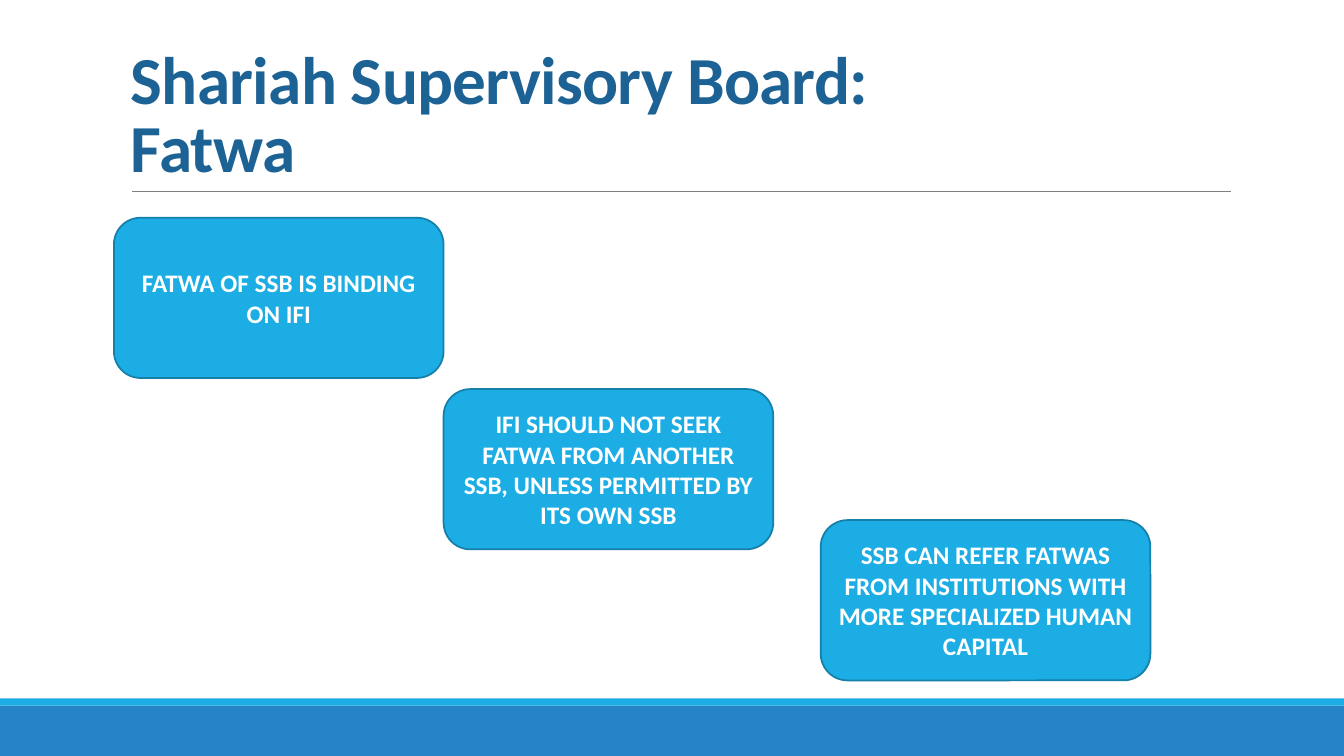
from dataclasses import dataclass

from lxml.etree import SubElement
from pptx import Presentation
from pptx.dml.color import RGBColor
from pptx.enum.shapes import MSO_CONNECTOR, MSO_SHAPE
from pptx.enum.text import MSO_ANCHOR, PP_ALIGN
from pptx.oxml.ns import qn
from pptx.shapes.autoshape import Shape
from pptx.slide import Slide
from pptx.util import Inches, Pt


@dataclass(frozen=True)
class Theme:
    font: str = "Calibri"
    title_size: float = 48
    card_size: float = 18
    title: RGBColor = RGBColor.from_string("1D6294")
    card_text: RGBColor = RGBColor.from_string("FFFFFF")
    accent: RGBColor = RGBColor.from_string("1CADE4")
    card_line: RGBColor = RGBColor.from_string("1580A9")
    footer: RGBColor = RGBColor.from_string("2683C6")
    rule: RGBColor = RGBColor.from_string("808080")


@dataclass(frozen=True)
class Band:
    top: float
    height: float
    color: RGBColor


@dataclass(frozen=True)
class Card:
    left: float
    top: float
    text: str


THEME = Theme()
SLIDE_WIDTH, SLIDE_HEIGHT = 13.33, 7.5
CARD_WIDTH, CARD_HEIGHT = 3.27, 1.59
TITLE = "Shariah Supervisory Board:\vFatwa"
BANDS = (
    Band(7, 0.5, THEME.footer),
    Band(6.93, 0.07, THEME.accent),
)
CARDS = (
    Card(1.13, 2.16, "FATWA OF SSB IS BINDING ON IFI"),
    Card(4.4, 3.86, "IFI SHOULD NOT SEEK FATWA FROM ANOTHER SSB, "
                    "UNLESS PERMITTED BY ITS OWN SSB"),
    Card(8.14, 5.16, "SSB CAN REFER FATWAS FROM INSTITUTIONS WITH "
                     "MORE SPECIALIZED HUMAN CAPITAL"),
)


def write_text(shape: Shape, text: str, size: float, color: RGBColor,
               anchor: MSO_ANCHOR, alignment: PP_ALIGN) -> None:
    frame = shape.text_frame
    frame.word_wrap = True
    frame.vertical_anchor = anchor
    paragraph = frame.paragraphs[0]
    paragraph.text = text
    paragraph.alignment = alignment
    formats = {"name": THEME.font, "size": Pt(size), "bold": True}
    for run in paragraph.runs:
        for attribute, value in formats.items():
            setattr(run.font, attribute, value)
        run.font.color.rgb = color


def add_filled_shape(slide: Slide, kind: MSO_SHAPE, left: float, top: float,
                     width: float, height: float, color: RGBColor) -> Shape:
    shape = slide.shapes.add_shape(
        kind, Inches(left), Inches(top), Inches(width), Inches(height))
    shape.shadow.inherit = False
    shape.fill.solid()
    shape.fill.fore_color.rgb = color
    shape.line.fill.background()
    return shape


def add_band(slide: Slide, band: Band) -> None:
    add_filled_shape(slide, MSO_SHAPE.RECTANGLE, 0, band.top,
                     SLIDE_WIDTH, band.height, band.color)


def add_title_rule(slide: Slide) -> None:
    rule = slide.shapes.add_connector(
        MSO_CONNECTOR.STRAIGHT, Inches(1.31), Inches(1.9), Inches(12.21), Inches(1.9))
    rule.line.color.rgb = THEME.rule
    rule.line.width = Pt(0.5)
    SubElement(rule._element.spPr, qn("a:effectLst"))


def add_title(slide: Slide) -> None:
    title = slide.shapes.add_textbox(Inches(1.2), Inches(0.31), Inches(11), Inches(1.59))
    write_text(title, TITLE, THEME.title_size, THEME.title,
               MSO_ANCHOR.BOTTOM, PP_ALIGN.LEFT)
    paragraph = title.text_frame.paragraphs[0]
    paragraph.line_spacing = 0.85
    for run in paragraph.runs:
        run._r.get_or_add_rPr().set("spc", "-50")


def add_card(slide: Slide, card: Card) -> None:
    shape = add_filled_shape(slide, MSO_SHAPE.ROUNDED_RECTANGLE, card.left, card.top,
                             CARD_WIDTH, CARD_HEIGHT, THEME.accent)
    shape.line.color.rgb = THEME.card_line
    shape.line.width = Pt(1.25)
    write_text(shape, card.text, THEME.card_size, THEME.card_text,
               MSO_ANCHOR.MIDDLE, PP_ALIGN.CENTER)


def main() -> None:
    presentation = Presentation()
    presentation.slide_width = Inches(SLIDE_WIDTH)
    presentation.slide_height = Inches(SLIDE_HEIGHT)
    slide = presentation.slides.add_slide(presentation.slide_layouts[6])
    for band in BANDS:
        add_band(slide, band)
    add_title_rule(slide)
    add_title(slide)
    for card in CARDS:
        add_card(slide, card)
    presentation.save("out.pptx")


if __name__ == "__main__":
    main()
